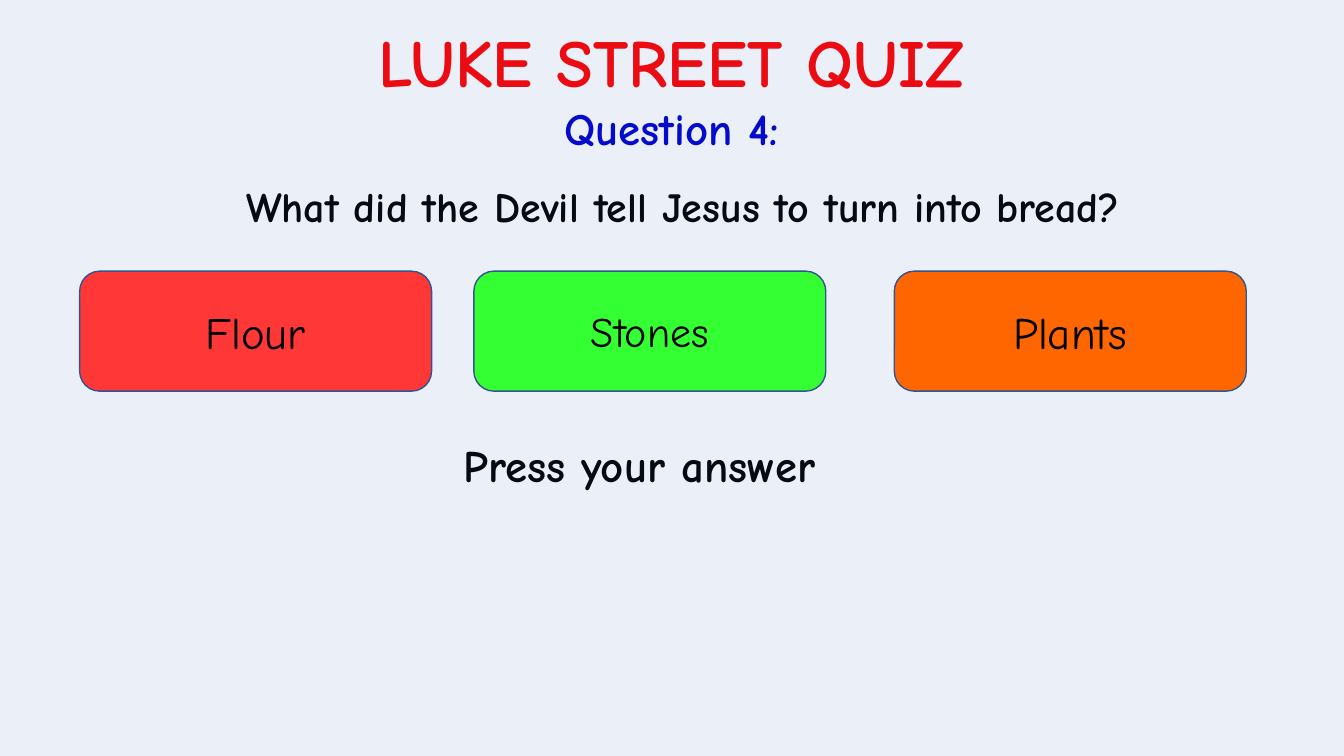
from lxml.etree import SubElement
from pptx import Presentation
from pptx.dml.color import RGBColor
from pptx.enum.shapes import MSO_SHAPE as Shape
from pptx.enum.text import MSO_ANCHOR as Anchor, MSO_AUTO_SIZE as AutoSize, PP_ALIGN as Align
from pptx.oxml.ns import qn
from pptx.util import Inches, Pt


def colour(hex_code):
    return RGBColor.from_string(hex_code)


class QuizSlide:
    """Holds the quiz style and the slide being filled."""

    font = "Comic Neue"
    ink = "000000"
    outline = "325491"

    def __init__(self, deck):
        self.slide = deck.slides.add_slide(deck.slide_layouts[5])

    def letter(self, frame, wording, size, hex_code, bold, align, anchor):
        frame.word_wrap = True
        frame.auto_size = AutoSize.NONE
        frame.vertical_anchor = anchor
        paragraph = frame.paragraphs[0]
        paragraph.alignment = align
        run = paragraph.add_run()
        run.text = wording
        run.font.name = self.font
        run.font.size = Pt(size)
        run.font.bold = bold
        run.font.color.rgb = colour(hex_code)
        return paragraph

    def title(self, wording, box, size, hex_code):
        heading = self.slide.shapes.title
        heading.left, heading.top, heading.width, heading.height = map(Inches, box)
        self.letter(heading.text_frame, wording, size, hex_code, True, Align.CENTER, Anchor.TOP)

    def text(self, wording, box, size, hex_code=ink, align=Align.CENTER, spacing=None, before=None):
        frame = self.slide.shapes.add_textbox(*map(Inches, box)).text_frame
        paragraph = self.letter(frame, wording, size, hex_code, True, align, Anchor.TOP)
        if spacing is not None:
            paragraph.line_spacing = spacing
        if before is not None:
            paragraph.space_before = Pt(before)

    def panel(self, kind, box, fill):
        panel = self.slide.shapes.add_shape(kind, *map(Inches, box))
        panel.shadow.inherit = False
        panel.fill.solid()
        panel.fill.fore_color.rgb = colour(fill)
        panel.line.color.rgb = colour(self.outline)
        panel.line.width = Pt(1)
        return panel

    def tint(self, box, fill, opacity):
        veil = self.panel(Shape.RECTANGLE, box, fill)
        shade = veil.element.spPr.find(qn("a:solidFill")).find(qn("a:srgbClr"))
        SubElement(shade, qn("a:alpha"), val=str(opacity * 1000))

    def answer(self, wording, box, fill, size):
        button = self.panel(Shape.ROUNDED_RECTANGLE, box, fill)
        self.letter(button.text_frame, wording, size, self.ink, False, Align.CENTER, Anchor.MIDDLE)


def main():
    deck = Presentation()
    deck.slide_width, deck.slide_height = Inches(13.33), Inches(7.5)
    quiz = QuizSlide(deck)
    quiz.title("LUKE STREET QUIZ", (3.12, 0.15, 7.08, 0.91), 48, "FF0000")
    quiz.text("What did the Devil tell Jesus to turn into bread?", (0.22, 1.69, 13.11, 1.19), 30,
              spacing=Pt(40), before=10)
    quiz.text("Press your answer", (4.5, 4.35, 6.73, 0.72), 32,
              align=Align.LEFT, spacing=0.9, before=7.5)
    quiz.text("Question 4:", (4.46, 0.95, 4.41, 0.64), 32, "0000CC")
    quiz.tint((-0.47, -0.48, 14.19, 8.73), "4472C4", 10)
    answers = [("Flour", 0.79, "FF3737", 32), ("Stones", 4.7, "33FF33", 30), ("Plants", 8.87, "FF6600", 32)]
    for wording, left, fill, size in answers:
        quiz.answer(wording, (left, 2.69, 3.49, 1.19), fill, size)
    deck.save("out.pptx")


if __name__ == "__main__":
    main()
